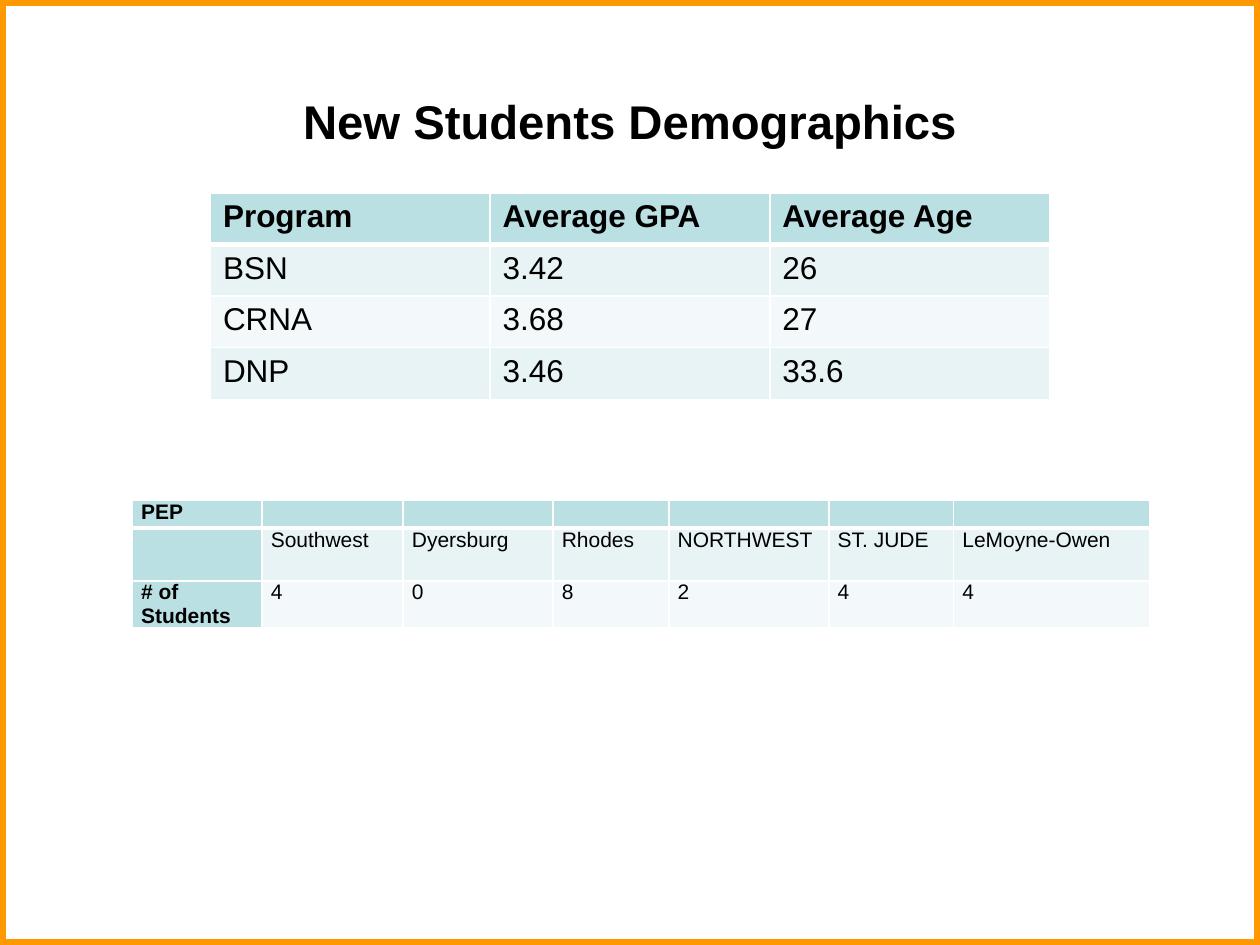
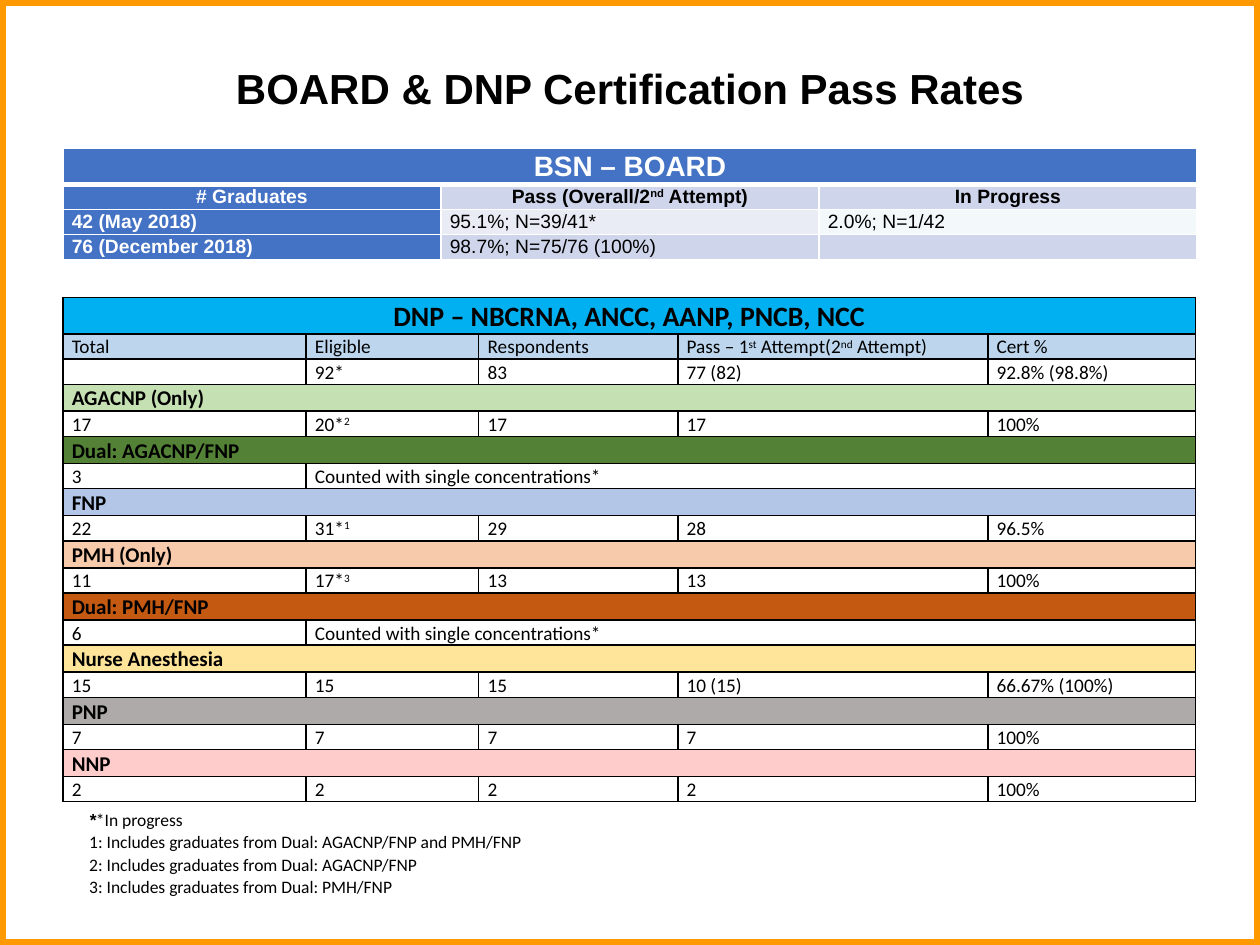
from dataclasses import dataclass

from lxml import etree
from pptx import Presentation
from pptx import util as u
from pptx.dml.color import RGBColor
from pptx.enum import shapes, text
from pptx.oxml import ns


@dataclass(frozen=True)
class Theme:
    heading_font: str = "Arial"
    detail_font: str = "Calibri"
    black: str = "000000"
    white: str = "FFFFFF"
    frame: str = "FF9900"
    teal: str = "BBE0E3"
    teal_light: str = "E7F3F4"
    teal_pale: str = "F3F9FA"
    blue: str = "4472C4"
    lavender: str = "CFD5EA"
    lavender_pale: str = "E9EBF5"
    cyan: str = "00B0F0"
    sky: str = "BDD6EE"
    banner_size: int = 16
    program_size: int = 18
    section_size: int = 12
    detail_size: int = 11
    note_size: int = 10
    line_spacing: float = 1.07


T = Theme()


def write(paragraph, content, font, size, color=T.black, bold=False, spacing=None):
    """Write text in one style; parts between ^ marks are superscript."""
    if spacing:
        paragraph.line_spacing = spacing
    paragraph.font.name = font
    paragraph.font.size = u.Pt(size)
    paragraph.font.bold = bold
    paragraph.font.color.rgb = RGBColor.from_string(color)
    for i, part in enumerate(content.split("^")):
        if part:
            run = paragraph.add_run()
            run.text = part
            if i % 2:
                run.font._element.set("baseline", "30000")


def add_grid(slide, left, top, widths, heights, rows, fills, font, size,
             border, header_rule=1, tight=True, spacing=None):
    """Add a table; the last cell of a short row spans the remaining columns."""
    table = slide.shapes.add_table(
        len(rows), len(widths), u.Inches(left), u.Inches(top),
        u.Inches(sum(widths)), u.Inches(sum(heights))).table
    table.first_row = table.horz_banding = False
    for column, width in zip(table.columns, widths):
        column.width = u.Inches(width)
    for r, (row, height) in enumerate(zip(rows, heights)):
        table.rows[r].height = u.Inches(height)
        if len(row) < len(widths):
            table.cell(r, len(row) - 1).merge(table.cell(r, len(widths) - 1))
        for c in range(len(widths)):
            cell = table.cell(r, c)
            if tight:
                cell.margin_left = cell.margin_right = u.Inches(0.07)
                cell.margin_top = cell.margin_bottom = 0
            if fills[r]:
                cell.fill.solid()
                cell.fill.fore_color.rgb = RGBColor.from_string(fills[r])
            else:
                cell.fill.background()
            write(cell.text_frame.paragraphs[0], row[c] if c < len(row) else "",
                  font, size, spacing=spacing)
            # Borders come before the fill in the cell properties
            props = cell._tc.get_or_add_tcPr()
            for i, side in enumerate(("lnL", "lnR", "lnT", "lnB")):
                heavy = (r, side) in ((0, "lnB"), (1, "lnT"))
                line = etree.Element(ns.qn(f"a:{side}"),
                                     w=str(u.Pt(header_rule if heavy else 1)))
                solid = etree.SubElement(line, ns.qn("a:solidFill"))
                etree.SubElement(solid, ns.qn("a:srgbClr"), val=border)
                props.insert(i, line)
    return table


prs = Presentation()
prs.slide_width, prs.slide_height = u.Inches(10), u.Inches(7.5)

# Shared frame and title
slides = []
for heading, size, height in (("New Students Demographics", 27, 1.25),
                              ("BOARD & DNP Certification Pass Rates", 24, 0.73)):
    slide = prs.slides.add_slide(prs.slide_layouts[5])
    frame = slide.shapes.add_shape(shapes.MSO_SHAPE.RECTANGLE, 0, 0,
                                   prs.slide_width, prs.slide_height)
    frame.shadow.inherit = False
    frame.fill.background()
    frame.line.color.rgb = RGBColor.from_string(T.frame)
    frame.line.width = u.Pt(6.5)
    title = slide.shapes.title
    title.left, title.top = u.Inches(0.5), u.Inches(0.33)
    title.width, title.height = u.Inches(9), u.Inches(height)
    title.text_frame.vertical_anchor = text.MSO_ANCHOR.MIDDLE
    title.text_frame.paragraphs[0].alignment = text.PP_ALIGN.CENTER
    write(title.text_frame.paragraphs[0], heading, T.heading_font, size, bold=True)
    slides.append(slide)
demographics, pass_rates = slides

# Slide 1: students by partner college
partners = add_grid(
    demographics, 1.05, 3.97, [1.03, 1.12, 1.19, 0.92, 1.27, 0.99, 1.56],
    [0.22, 0.42, 0.37],
    [["PEP", "", "", "", "", "", ""],
     ["", "Southwest", "Dyersburg", "Rhodes", "NORTHWEST", "ST. JUDE", "LeMoyne-Owen"],
     ["# of Students", "4", "0", "8", "2", "4", "4"]],
    [T.teal, T.teal_light, T.teal_pale], T.heading_font, T.section_size,
    T.white, header_rule=3)
for r in range(3):
    row_label = partners.cell(r, 0)
    row_label.fill.fore_color.rgb = RGBColor.from_string(T.teal)
    row_label.text_frame.paragraphs[0].font.bold = True

# Slide 1: averages by program
averages = add_grid(
    demographics, 1.67, 1.53, [2.22] * 3, [0.41] * 4,
    [["Program", "Average GPA", "Average Age"],
     ["BSN", "3.42", "26"],
     ["CRNA", "3.68", "27"],
     ["DNP", "3.46", "33.6"]],
    [T.teal, T.teal_light, T.teal_pale, T.teal_light],
    T.heading_font, T.program_size, T.white, header_rule=3, tight=False)
for c in range(3):
    averages.cell(0, c).text_frame.paragraphs[0].font.bold = True

# Slide 2: footnotes
footnotes = pass_rates.shapes.add_textbox(
    u.Inches(0.61), u.Inches(6.36), u.Inches(3.74), u.Inches(0.81)).text_frame
footnotes.word_wrap = True
for i, note in enumerate(("*", "1: Includes graduates from Dual: AGACNP/FNP and PMH/FNP",
                          "2: Includes graduates from Dual: AGACNP/FNP",
                          "3: Includes graduates from Dual: PMH/FNP")):
    paragraph = footnotes.add_paragraph() if i else footnotes.paragraphs[0]
    write(paragraph, note, T.detail_font, T.note_size, spacing=T.line_spacing)
progress_note = footnotes.paragraphs[0]
star = progress_note.runs[0].font
star.name, star.bold, star.italic = T.heading_font, True, True
progress_note.add_run().text = "*In progress"

# Slide 2: BSN results
bsn = add_grid(
    pass_rates, 0.5, 1.18, [3] * 3, [0.28, 0.19, 0.2, 0.19],
    [["BSN – BOARD"],
     ["# Graduates", "Pass (Overall/2^nd^ Attempt)", "In Progress"],
     ["42 (May 2018)", "95.1%; N=39/41*", "2.0%; N=1/42"],
     ["76 (December 2018)", "98.7%; N=75/76 (100%)", ""]],
    [T.blue, T.lavender, T.lavender_pale, T.lavender],
    T.heading_font, T.detail_size, T.white, header_rule=3, spacing=T.line_spacing)
bsn.cell(2, 2).fill.fore_color.rgb = RGBColor.from_string(T.teal_pale)
for r in range(4):
    cohort = bsn.cell(r, 0)
    cohort.fill.fore_color.rgb = RGBColor.from_string(T.blue)
    cohort.text_frame.paragraphs[0].font.bold = True
    cohort.text_frame.paragraphs[0].font.color.rgb = RGBColor.from_string(T.white)
for c in range(3):
    column_head = bsn.cell(1, c).text_frame.paragraphs[0]
    column_head.font.bold = True
    column_head.alignment = text.PP_ALIGN.CENTER

# Slide 2: DNP results, a coloured band above each concentration
counted = "Counted with single concentrations*"
concentrations = [
    ("AGACNP (Only)", "C5E0B3", ["17", "20*^2", "17", "17", "100%"]),
    ("Dual: AGACNP/FNP", "538135", ["3", counted]),
    ("FNP", "B4C6E7", ["22", "31*^1", "29", "28", "96.5%"]),
    ("PMH (Only)", "F7CAAC", ["11", "17*^3", "13", "13", "100%"]),
    ("Dual: PMH/FNP", "C45911", ["6", counted]),
    ("Nurse Anesthesia", "FFE599", ["15", "15", "15", "10 (15)", "66.67% (100%)"]),
    ("PNP", "AEAAAA", ["7", "7", "7", "7", "100%"]),
    ("NNP", "FFCCCC", ["2", "2", "2", "2", "100%"]),
]
dnp_rows = [["DNP – NBCRNA, ANCC, AANP, PNCB, NCC"],
            ["Total", "Eligible", "Respondents", "Pass – 1^st^ Attempt(2^nd^ Attempt)",
             "Cert %"],
            ["", "92*", "83", "77 (82)", "92.8% (98.8%)"]]
dnp_fills = [T.cyan, T.sky, None]
for name, band, results in concentrations:
    dnp_rows += [[name], results]
    dnp_fills += [band, None]
dnp = add_grid(
    pass_rates, 0.5, 2.36, [1.93, 1.37, 1.58, 2.46, 1.65],
    [0.29, 0.2, 0.2] + [0.21, 0.2] * len(concentrations),
    dnp_rows, dnp_fills, T.detail_font, T.detail_size, T.black,
    spacing=T.line_spacing)
for r, row in enumerate(dnp_rows):
    if len(row) == 1:
        band_label = dnp.cell(r, 0).text_frame.paragraphs[0]
        band_label.font.bold = True
        band_label.font.size = u.Pt(T.section_size)

# Banners of both result tables
for results_table in (bsn, dnp):
    banner = results_table.cell(0, 0).text_frame.paragraphs[0]
    banner.alignment = text.PP_ALIGN.CENTER
    banner.font.size = u.Pt(T.banner_size)

prs.save("out.pptx")
